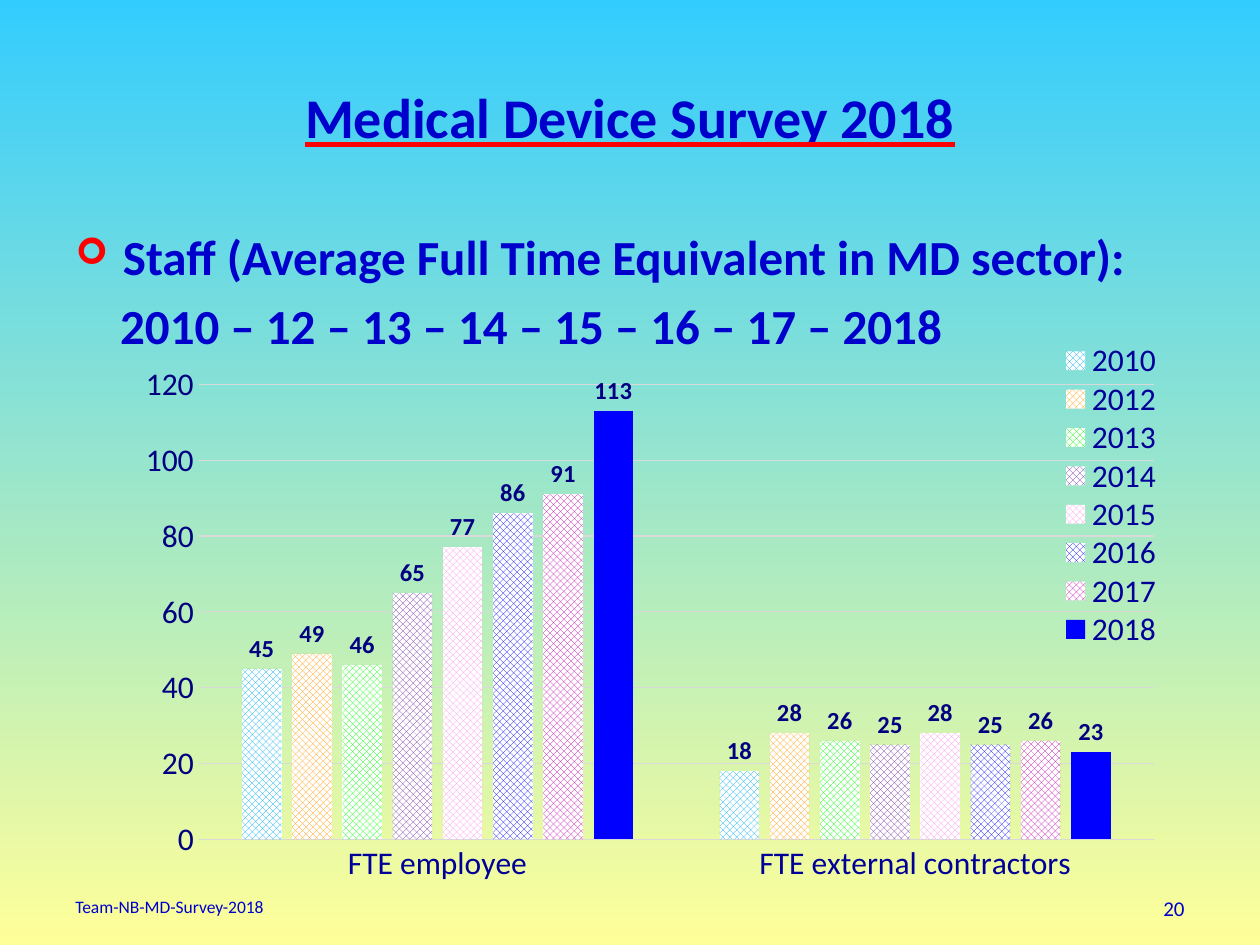
from lxml.etree import SubElement
from pptx import Presentation
from pptx.chart.data import CategoryChartData
from pptx.dml.color import RGBColor
from pptx.enum.chart import XL_CHART_TYPE as ChartType
from pptx.enum.chart import XL_LABEL_POSITION as LabelPos
from pptx.enum.chart import XL_LEGEND_POSITION as LegendPos
from pptx.enum.chart import XL_TICK_MARK as Tick
from pptx.enum.dml import MSO_PATTERN as Pattern
from pptx.enum.text import MSO_ANCHOR as Anchor
from pptx.enum.text import MSO_AUTO_SIZE as AutoSize
from pptx.enum.text import PP_ALIGN as Align
from pptx.oxml import parse_xml
from pptx.oxml.ns import nsdecls, qn
from pptx.util import Pt

SKY = RGBColor(0x33, 0xCC, 0xFF)
CREAM = RGBColor(0xFF, 0xFF, 0x99)
BLUE = RGBColor(0x00, 0x00, 0xCC)
AXIS_BLUE = RGBColor(0x00, 0x00, 0x99)
NAVY = RGBColor(0x00, 0x00, 0x80)
RED = RGBColor(0xFF, 0x00, 0x00)
GRID = RGBColor(0xD9, 0xD9, 0xD9)
WHITE = RGBColor(0xFF, 0xFF, 0xFF)
CURRENT_YEAR = RGBColor(0x00, 0x00, 0xFF)

FONT = "Calibri"
CATEGORIES = ["FTE employee", "FTE external contractors"]
STAFF = [
    ("2010", (45, 18), RGBColor(0x00, 0xB0, 0xF0)),
    ("2012", (49, 28), RGBColor(0xFF, 0x99, 0x00)),
    ("2013", (46, 26), RGBColor(0x00, 0xFF, 0x00)),
    ("2014", (65, 25), RGBColor(0x70, 0x30, 0xA0)),
    ("2015", (77, 28), RGBColor(0xFD, 0x91, 0xE8)),
    ("2016", (86, 25), RGBColor(0x01, 0x01, 0xFF)),
    ("2017", (91, 26), RGBColor(0xC7, 0x09, 0xB0)),
    ("2018", (113, 23), CURRENT_YEAR),
]


def style_font(font, size, color, bold=False):
    font.name = FONT
    font.size = Pt(size)
    font.bold = bold
    font.color.rgb = color


def add_run(paragraph, text, size, bold=False):
    run = paragraph.add_run()
    run.text = text
    style_font(run.font, size, BLUE, bold)
    return run


def place(shape, left, top, width, height):
    shape.left, shape.top = Pt(left), Pt(top)
    shape.width, shape.height = Pt(width), Pt(height)


def set_background(slide):
    fill = slide.background.fill
    fill.gradient()
    fill.gradient_angle = 270
    for stop, position, color in zip(fill.gradient_stops, (0, 1), (SKY, CREAM)):
        stop.position = position
        stop.color.rgb = color


def set_title(title):
    place(title, 36, 21.6, 648, 90)
    title.text_frame.vertical_anchor = Anchor.MIDDLE
    paragraph = title.text_frame.paragraphs[0]
    paragraph.alignment = Align.CENTER
    run = add_run(paragraph, "Medical Device Survey 2018", 32, True)
    run.font.underline = True
    underline_fill = parse_xml(
        f'<a:uFill {nsdecls("a")}><a:solidFill><a:srgbClr val="{RED}"/>'
        "</a:solidFill></a:uFill>"
    )
    run.font._element.find(qn("a:latin")).addprevious(underline_fill)


def set_indent(paragraph, margin, first_line):
    properties = paragraph._p.get_or_add_pPr()
    properties.set("marL", str(Pt(margin)))
    properties.set("indent", str(Pt(first_line)))
    return properties


def set_body(body):
    place(body, 36, 126, 648, 59)
    frame = body.text_frame
    frame.auto_size = AutoSize.NONE
    frame.vertical_anchor = Anchor.TOP

    heading = frame.paragraphs[0]
    properties = set_indent(heading, 27, -27)
    bullet_color = SubElement(properties, qn("a:buClr"))
    SubElement(bullet_color, qn("a:srgbClr"), val=str(RED))
    SubElement(properties, qn("a:buSzPct"), val="75000")
    SubElement(properties, qn("a:buFont"), typeface="Wingdings")
    SubElement(properties, qn("a:buChar"), char="➢")
    heading.space_before = Pt(0)
    add_run(heading, "Staff (Average Full Time Equivalent in MD sector):", 28, True)

    years = frame.add_paragraph()
    SubElement(set_indent(years, 25.5, 0), qn("a:buNone"))
    years.space_before = Pt(5.6)
    add_run(years, "2010 – 12 – 13 – 14 – 15 – 16 – 17 – 2018", 28, True)


def add_footer(slide, text, left, width, size, alignment):
    box = slide.shapes.add_textbox(Pt(left), Pt(508.3), Pt(width), Pt(21))
    box.text_frame.word_wrap = True
    paragraph = box.text_frame.paragraphs[0]
    paragraph.alignment = alignment
    add_run(paragraph, text, size)


def set_layout(element, x, y, width, height, inner=False):
    """Place a chart part by fractions of the chart's size."""
    target = '<c:layoutTarget val="inner"/>' if inner else ""
    layout = parse_xml(
        f'<c:layout {nsdecls("c")}><c:manualLayout>{target}'
        '<c:xMode val="edge"/><c:yMode val="edge"/>'
        f'<c:x val="{x}"/><c:y val="{y}"/><c:w val="{width}"/><c:h val="{height}"/>'
        "</c:manualLayout></c:layout>"
    )
    for old in element.findall(qn("c:layout")):
        element.remove(old)
    if inner:
        element.insert(0, layout)
    else:
        element.find(qn("c:legendPos")).addnext(layout)


def style_axes(chart):
    for axis, color in ((chart.category_axis, AXIS_BLUE), (chart.value_axis, NAVY)):
        axis.major_tick_mark = axis.minor_tick_mark = Tick.NONE
        style_font(axis.tick_labels.font, 18, color)

    values = chart.value_axis
    values.minimum_scale, values.maximum_scale, values.major_unit = 0, 120, 20
    values.tick_labels.number_format = "0"
    values.tick_labels.number_format_is_linked = False
    values.format.line.fill.background()
    for line in (chart.category_axis.format.line, values.major_gridlines.format.line):
        line.color.rgb = GRID
        line.width = Pt(0.75)


def style_series(series, color):
    fill = series.format.fill
    if color == CURRENT_YEAR:
        fill.solid()
        fill.fore_color.rgb = color
    else:
        fill.patterned()
        fill.pattern = Pattern.LARGE_CHECKER_BOARD
        fill.fore_color.rgb = color
        fill.back_color.rgb = WHITE
    series.invert_if_negative = False

    labels = series.data_labels
    labels.show_value = True
    labels.position = LabelPos.OUTSIDE_END
    labels.number_format = "0"
    labels.number_format_is_linked = False
    style_font(labels.font, 14, NAVY, True)


def add_staff_chart(slide):
    data = CategoryChartData(number_format="0")
    data.categories = CATEGORIES
    for year, values, _ in STAFF:
        data.add_series(year, values)
    chart = slide.shapes.add_chart(
        ChartType.COLUMN_CLUSTERED, Pt(70.6), Pt(167), Pt(613.4), Pt(351.4), data
    ).chart
    chart.has_title = False
    style_axes(chart)

    plot = chart.plots[0]
    plot.gap_width, plot.overlap = 219, -27
    plot.vary_by_categories = False
    for series, (_, _, color) in zip(plot.series, STAFF):
        style_series(series, color)

    chart.has_legend = True
    legend = chart.legend
    legend.position = LegendPos.BOTTOM
    legend.include_in_layout = False
    style_font(legend.font, 18, AXIS_BLUE)
    set_layout(legend._element, 0.87, 0.08, 0.1, 0.5)
    plot_area = chart._chartSpace.chart.plotArea
    set_layout(plot_area, 0.07, 0.15, 0.89, 0.74, inner=True)


def main():
    deck = Presentation()
    deck.slide_width, deck.slide_height = Pt(720), Pt(540)
    slide = deck.slides.add_slide(deck.slide_layouts[1])
    set_background(slide)
    set_title(slide.shapes.title)
    set_body(slide.placeholders[1])
    add_footer(slide, "20", 516, 168, 12, Align.RIGHT)
    add_footer(slide, "Team-NB-MD-Survey-2018", 36, 228, 10, Align.LEFT)
    add_staff_chart(slide)
    deck.save("out.pptx")


if __name__ == "__main__":
    main()
